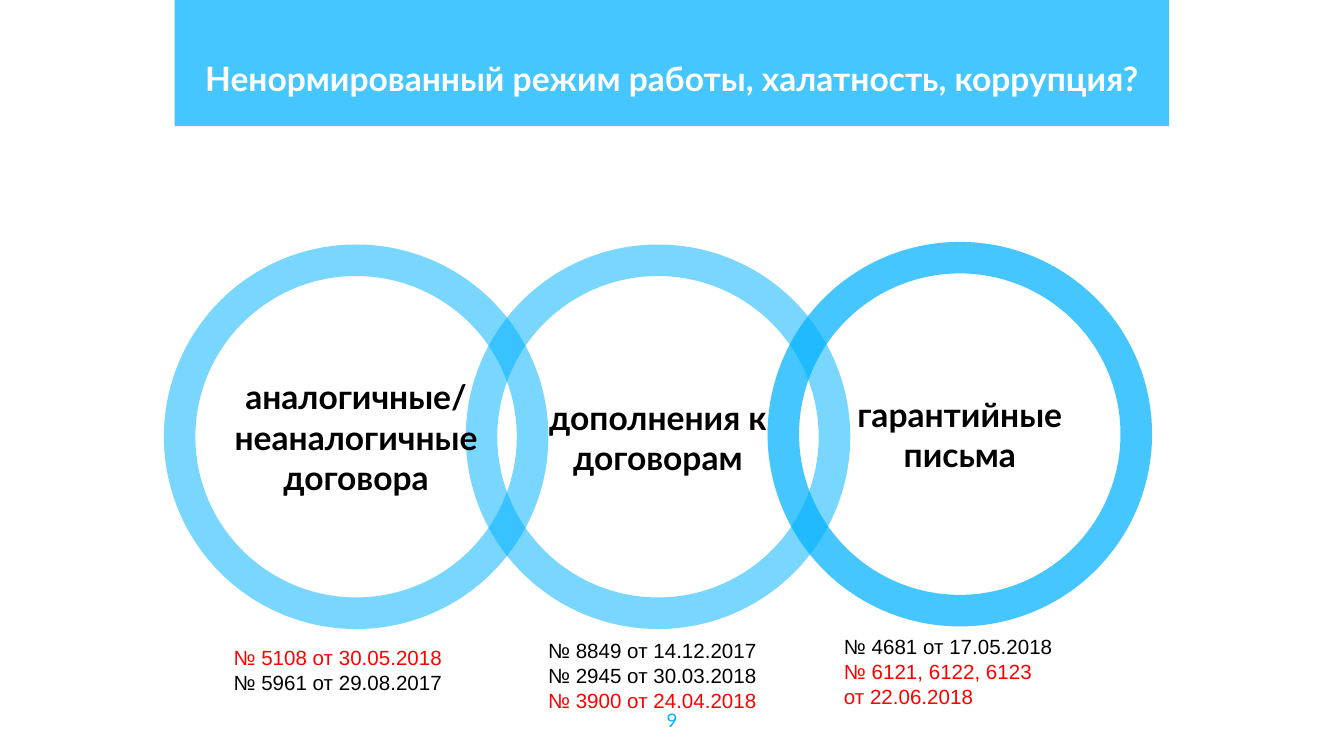
"""Build the slide with three linked rings and the contract numbers below them."""
import pptx
import pptx.dml.color
import pptx.enum.shapes
import pptx.enum.text
import pptx.oxml.ns
import pptx.util
from lxml import etree

Pt = pptx.util.Pt
SHAPES = pptx.enum.shapes.MSO_SHAPE
ANCHOR = pptx.enum.text.MSO_ANCHOR
ALIGN = pptx.enum.text.PP_ALIGN

COLORS = {"blue": "00B2FF", "white": "FFFFFF", "black": "000000", "red": "FF0000"}
TITLE = "Ненормированный режим работы, халатность, коррупция?"
PAGE = "9"
RINGS = [
    {
        "label": ["аналогичные/", "неаналогичные договора"],
        "top": 131, "opacity": 53,
        "notes": [("№ 5108 от 30.05.2018", "red"), ("№ 5961 от 29.08.2017", "black")],
        "notes_at": (118, 338.4),
    },
    {
        "label": ["дополнения к договорам"],
        "top": 131, "opacity": 53,
        "notes": [("№ 8849 от 14.12.2017", "black"), ("№ 2945 от 30.03.2018", "black"),
                  ("№ 3900 от 24.04.2018", "red")],
        "notes_at": (286.5, 334.8),
    },
    {
        "label": ["гарантийные письма"],
        "top": 129.6, "opacity": 73,
        "notes": [("№ 4681 от 17.05.2018", "black"), ("№ 6121, 6122, 6123", "red"),
                  ("от 22.06.2018", "red")],
        "notes_at": (445, 332.6),
    },
]
RING_LEFT, RING_PITCH, RING_SIZE, RING_BAND = 87.8, 161.7, 206, 0.082
NOTES_SIZE = (145.4, 103)
HEADER_LEFT, HEADER_WIDTH, HEADER_HEIGHT = 93.6, 532.8, 67.7


def rgb(name):
    return pptx.dml.color.RGBColor.from_string(COLORS[name])


def add_shape(s, kind, box, opacity):
    sp = s.shapes.add_shape(kind, *map(Pt, box))
    sp.shadow.inherit = False
    sp.line.fill.background()
    sp.fill.solid()
    sp.fill.fore_color.rgb = rgb("blue")
    color = sp.fill._xPr.find(".//" + pptx.oxml.ns.qn("a:srgbClr"))
    etree.SubElement(color, pptx.oxml.ns.qn("a:alpha"), val=str(opacity * 1000))
    return sp


def write(sp, lines, size=18, font="Lato", bold=False, align=ALIGN.CENTER, anchor=ANCHOR.TOP):
    tf = sp.text_frame
    tf.word_wrap = True
    tf.vertical_anchor = anchor
    tf.margin_left = tf.margin_right = tf.margin_top = tf.margin_bottom = Pt(7.2)
    for i, (text, color) in enumerate(lines):
        p = tf.add_paragraph() if i else tf.paragraphs[0]
        p.alignment = align
        r = p.add_run()
        r.text = text
        r.font.size = Pt(size)
        r.font.name = font
        r.font.bold = bold
        r.font.color.rgb = rgb(color)


def add_text(s, box, lines, **fmt):
    write(s.shapes.add_textbox(*map(Pt, box)), lines, **fmt)


def main():
    prs = pptx.Presentation()
    prs.slide_width, prs.slide_height = Pt(720), Pt(405)
    s = prs.slides.add_slide(prs.slide_layouts[6])

    add_shape(s, SHAPES.RECTANGLE, (HEADER_LEFT, 0, HEADER_WIDTH, HEADER_HEIGHT), 73)
    add_text(s, (HEADER_LEFT, 23.8, HEADER_WIDTH, 39.6), [(TITLE, "white")], bold=True)

    for i, ring in reversed(list(enumerate(RINGS))):
        box = (RING_LEFT + i * RING_PITCH, ring["top"], RING_SIZE, RING_SIZE)
        sp = add_shape(s, SHAPES.DONUT, box, ring["opacity"])
        sp.adjustments[0] = RING_BAND
        write(sp, [(text, "black") for text in ring["label"]], bold=True, anchor=ANCHOR.MIDDLE)

    add_text(s, (338.4, 373.7, 43.2, 31), [(PAGE, "blue")], size=10)
    for ring in RINGS:
        add_text(s, ring["notes_at"] + NOTES_SIZE, ring["notes"],
                 size=11, font="Arial", align=ALIGN.LEFT)

    prs.save("out.pptx")


if __name__ == "__main__":
    main()
